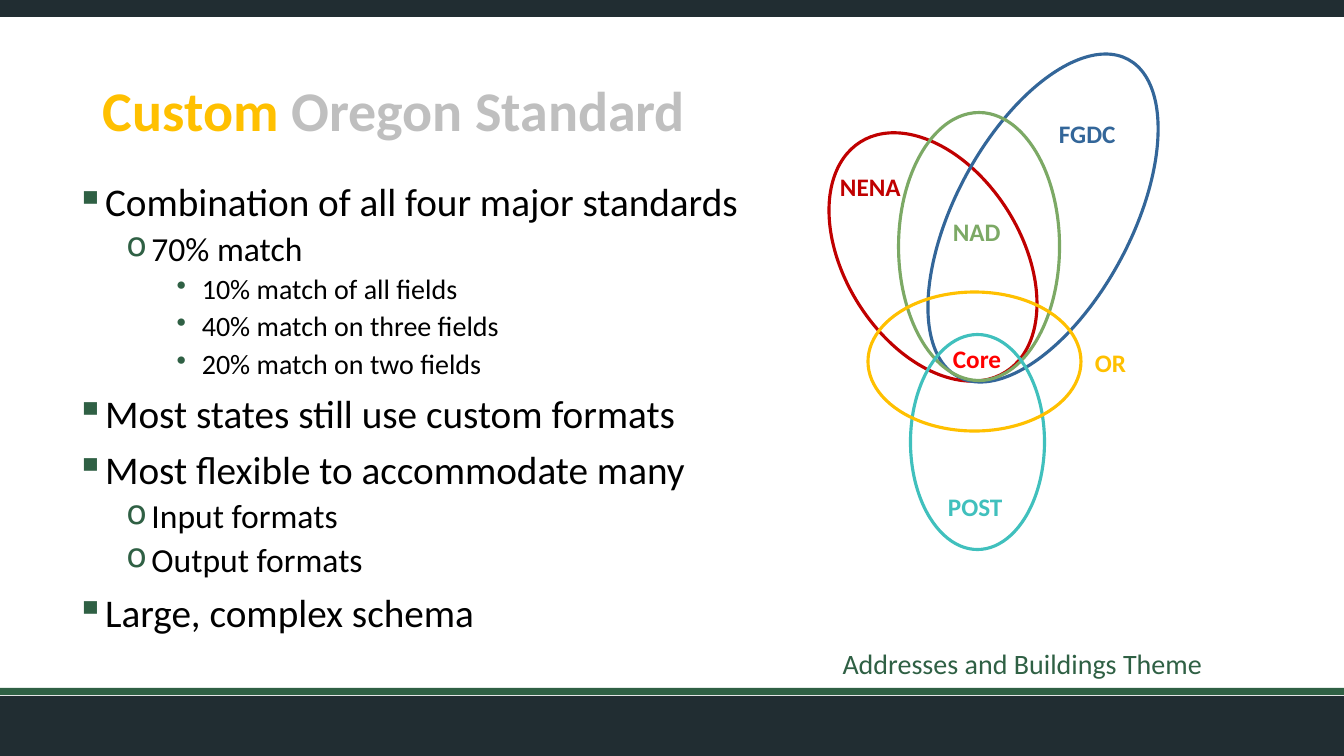
from lxml import etree
from pptx import Presentation
from pptx import util as u
from pptx.dml.color import RGBColor
from pptx.enum import shapes, text
from pptx.oxml import ns

SCALE = 914400 / 100.8
WIDTH, HEIGHT = 1344, 756
FONT = "Calibri"
COLORS = {
    "dark": "212D32", "green": "2F6044", "black": "000000", "silver": "BFBFBF",
    "gold": "FFC000", "crimson": "C00000", "blue": "336699", "leaf": "7CA965",
    "teal": "40C0BD", "red": "FF0000",
}
LEVELS = [("▪", 28, 10), ("o", 24, 5), ("•", 20, 5)]
POINTS = [
    (0, "Combination of all four major standards"),
    (1, "70% match"),
    (2, "10% match of all fields"),
    (2, "40% match on three fields"),
    (2, "20% match on two fields"),
    (0, "Most states still use custom formats"),
    (0, "Most flexible to accommodate many"),
    (1, "Input formats"),
    (1, "Output formats"),
    (0, "Large, complex schema"),
]
BARS = [
    ((0, 696, WIDTH, 60), "dark"),
    ((0, 0, WIDTH, 17), "dark"),
    ((0, 688, WIDTH, 7), "green"),
]
ELLIPSES = [
    ((797, 169, 272, 176), 57.7, "crimson"),
    ((863, 130, 360, 176), 118.2, "blue"),
    ((845, 166, 268, 161), 90, "leaf"),
    ((870, 375, 215, 134), 270, "teal"),
    ((868, 292, 213, 139), 0, "gold"),
]
LABELS = [
    ("NAD", (943, 211, 83, 40), "leaf"),
    ("FGDC", (1049, 113, 83, 40), "blue"),
    ("NENA", (830, 166, 83, 40), "crimson"),
    ("POST", (938, 486, 83, 40), "teal"),
    ("OR", (1085, 342, 58, 40), "gold"),
    ("Core", (943, 338, 69, 40), "red"),
]


def px(length):
    """Turn pixels into EMU."""
    return u.Emu(round(length * SCALE))


def rgb(name):
    """Look up a named colour."""
    return RGBColor.from_string(COLORS[name])


def add_bar(slide, box, color):
    """Add a filled rectangle without outline."""
    shape = slide.shapes.add_shape(shapes.MSO_SHAPE.RECTANGLE, *map(px, box))
    shape.shadow.inherit = False
    shape.fill.solid()
    shape.fill.fore_color.rgb = rgb(color)
    shape.line.fill.background()


def add_ellipse(slide, box, rotation, color):
    """Add an outlined, rotated ellipse."""
    shape = slide.shapes.add_shape(shapes.MSO_SHAPE.OVAL, *map(px, box))
    shape.shadow.inherit = False
    shape.rotation = rotation
    shape.fill.background()
    shape.line.color.rgb = rgb(color)
    shape.line.width = u.Pt(2.25)


def add_frame(slide, box, wrap=True, anchor=text.MSO_ANCHOR.TOP):
    """Add an empty text box and return its text frame."""
    frame = slide.shapes.add_textbox(*map(px, box)).text_frame
    frame.word_wrap = wrap
    frame.vertical_anchor = anchor
    return frame


def add_run(paragraph, words, size=18, color="black", bold=False):
    """Add formatted text to a paragraph."""
    run = paragraph.add_run()
    run.text = words
    run.font.name = FONT
    run.font.size = u.Pt(size)
    run.font.bold = bold
    run.font.color.rgb = rgb(color)


def set_bullet(paragraph, character, level):
    """Give a paragraph a green bullet and a hanging indent."""
    properties = paragraph._p.get_or_add_pPr()
    properties.set("marL", str(u.Inches(0.25 + 0.5 * level)))
    properties.set("indent", str(u.Inches(-0.25)))
    color = etree.SubElement(properties, ns.qn("a:buClr"))
    etree.SubElement(color, ns.qn("a:srgbClr"), val=COLORS["green"])
    etree.SubElement(properties, ns.qn("a:buChar"), char=character)


def add_title(slide):
    """Add the two-coloured title."""
    frame = add_frame(slide, (93, 40, 1159, 146), anchor=text.MSO_ANCHOR.MIDDLE)
    paragraph = frame.paragraphs[0]
    paragraph.line_spacing = 0.9
    add_run(paragraph, "Custom ", size=40, color="gold", bold=True)
    add_run(paragraph, "Oregon Standard", size=40, color="silver", bold=True)


def add_points(slide):
    """Add the three-level bullet list."""
    frame = add_frame(slide, (66, 178, 1213, 465))
    for index, (level, words) in enumerate(POINTS):
        character, size, space = LEVELS[level]
        paragraph = frame.add_paragraph() if index else frame.paragraphs[0]
        paragraph.level = level
        set_bullet(paragraph, character, level)
        paragraph.line_spacing = 0.9
        if index:
            paragraph.space_before = u.Pt(space)
        add_run(paragraph, words, size=size)


def add_theme(slide):
    """Add the right-aligned theme line above the footer."""
    paragraph = add_frame(slide, (382, 642, 830, 51)).paragraphs[0]
    paragraph.alignment = text.PP_ALIGN.RIGHT
    add_run(paragraph, "Addresses and Buildings Theme", size=20, color="green")


def main():
    """Build and save the slide."""
    presentation = Presentation()
    presentation.slide_width, presentation.slide_height = px(WIDTH), px(HEIGHT)
    slide = presentation.slides.add_slide(presentation.slide_layouts[6])
    for box, color in BARS:
        add_bar(slide, box, color)
    add_theme(slide)
    add_title(slide)
    add_points(slide)
    for box, rotation, color in ELLIPSES:
        add_ellipse(slide, box, rotation, color)
    for words, box, color in LABELS:
        frame = add_frame(slide, box, wrap=words != "Core")
        add_run(frame.paragraphs[0], words, color=color, bold=True)
    presentation.save("out.pptx")


if __name__ == "__main__":
    main()
